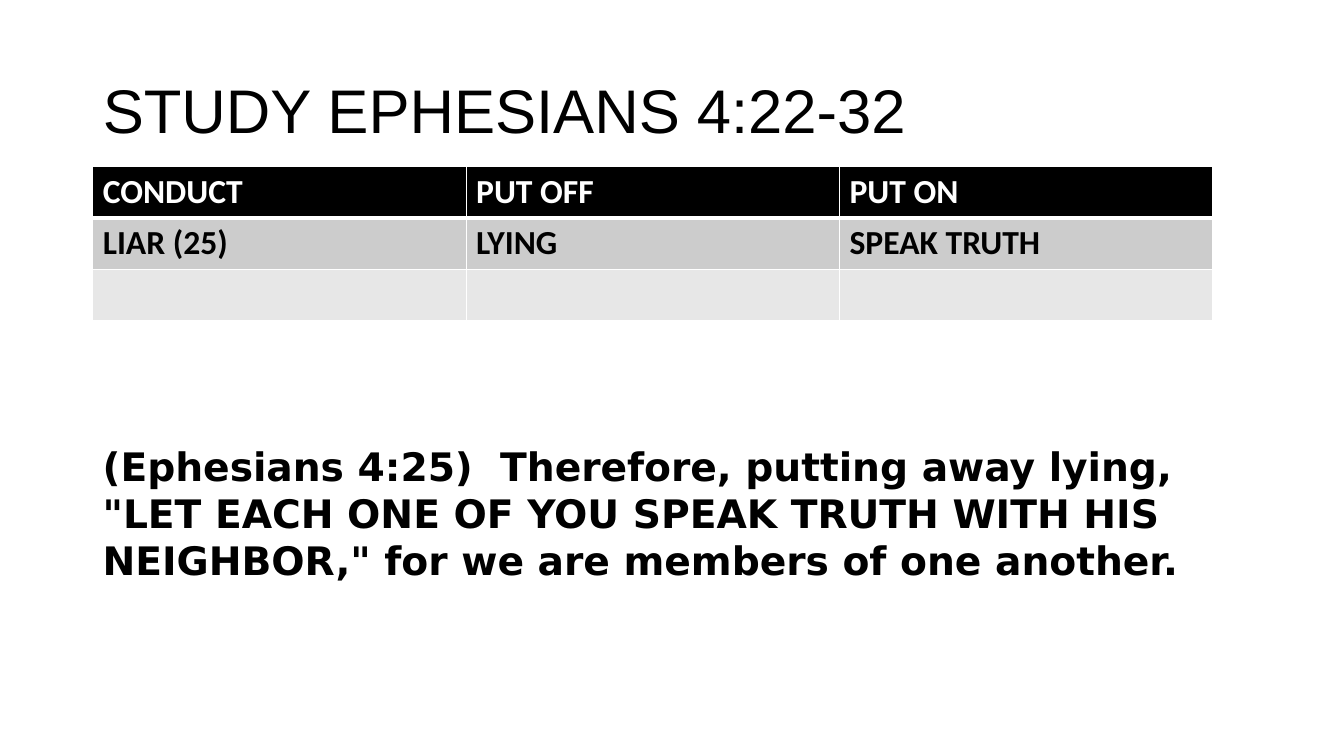
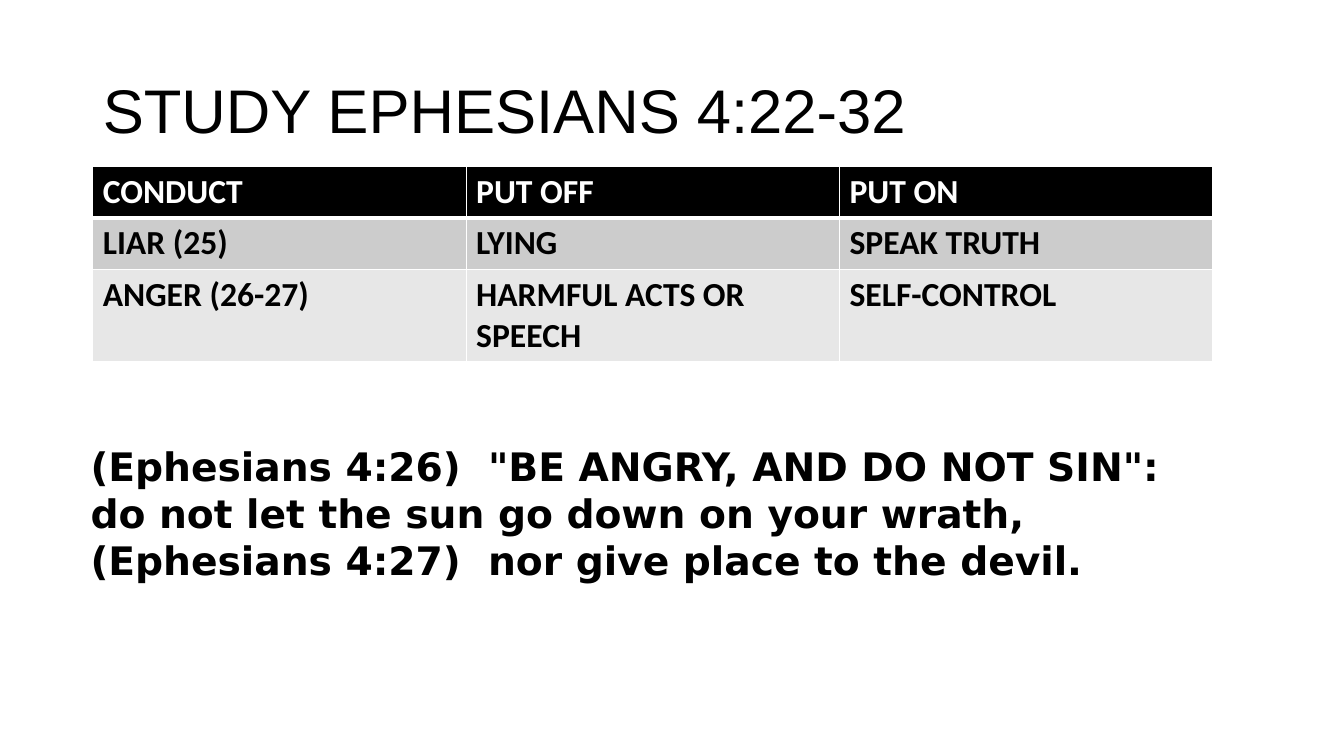
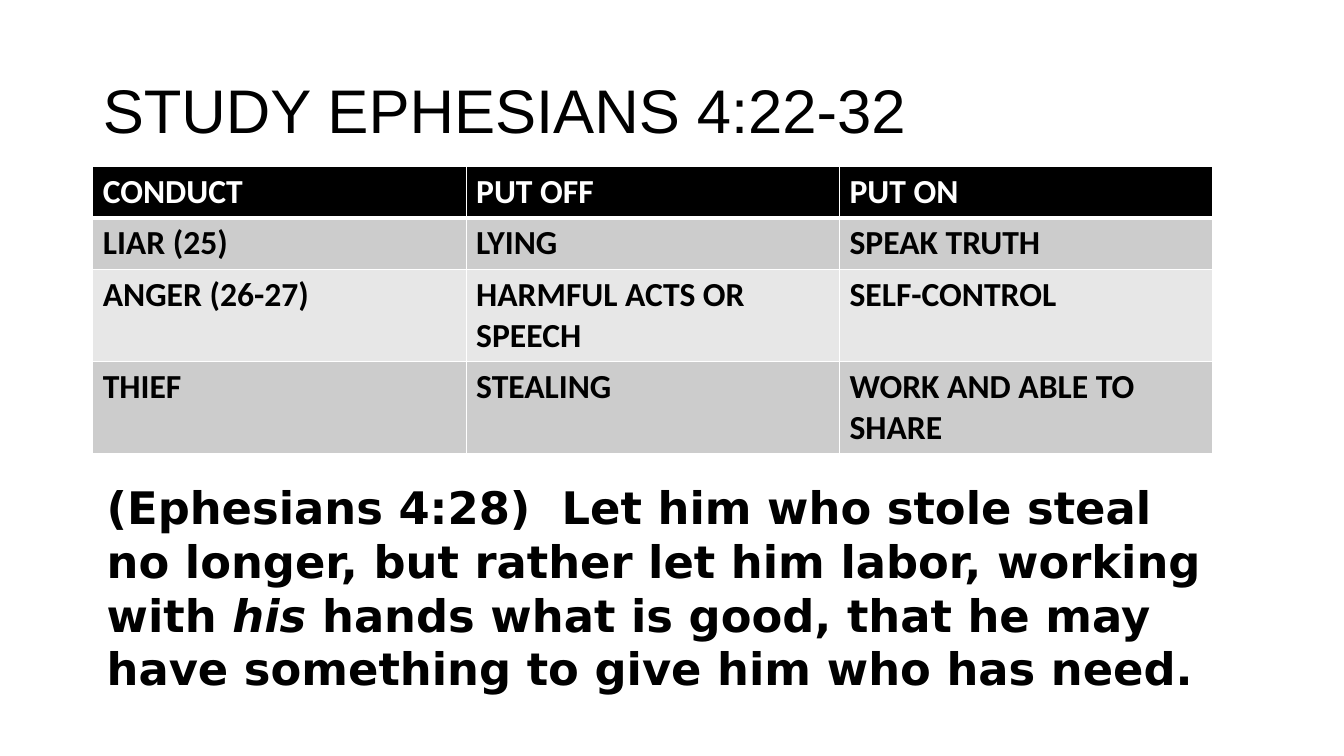
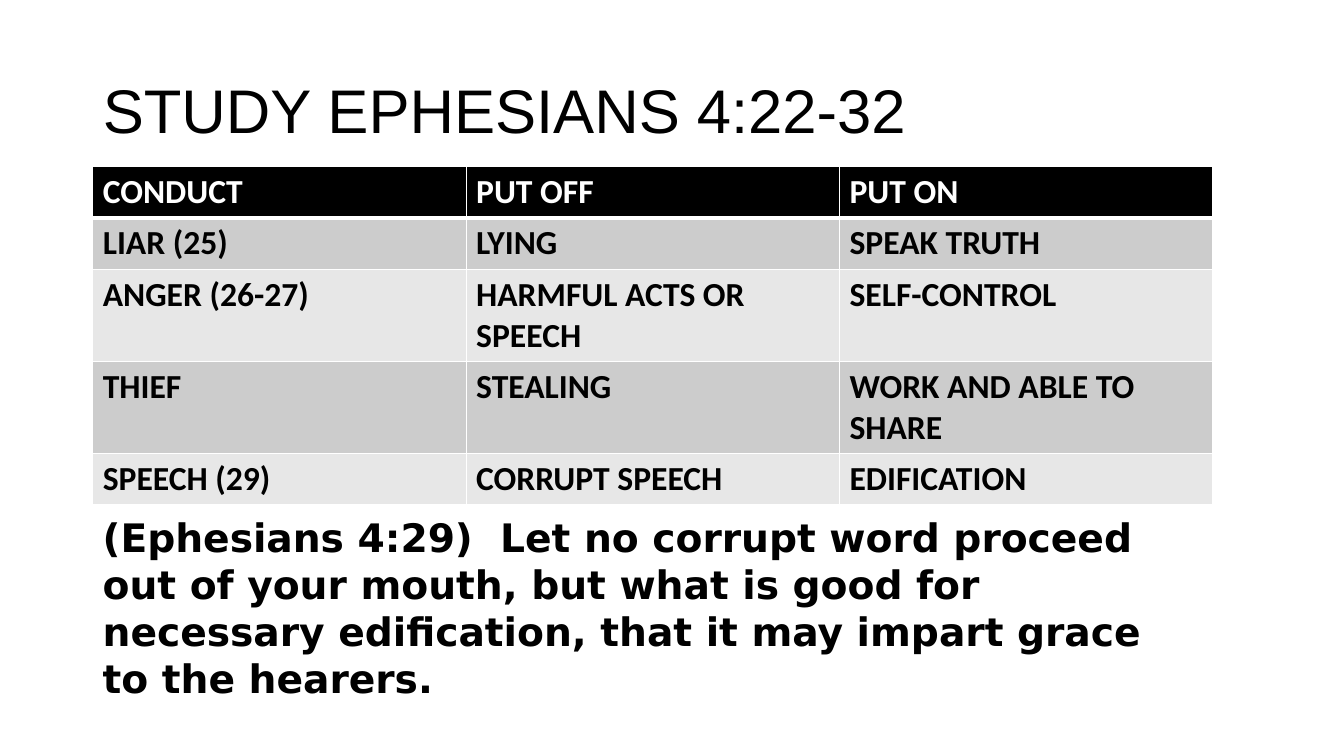
from lxml import etree
from pptx import Presentation
from pptx.dml.color import RGBColor
from pptx.enum.text import MSO_ANCHOR, MSO_AUTO_SIZE, PP_ALIGN
from pptx.oxml.ns import qn
from pptx.util import Inches, Pt

LEFT_ALIGN = PP_ALIGN.LEFT
MIDDLE = MSO_ANCHOR.MIDDLE
NO_AUTOFIT = MSO_AUTO_SIZE.NONE
GROW_SHAPE = MSO_AUTO_SIZE.SHAPE_TO_FIT_TEXT

BLACK = RGBColor(0x00, 0x00, 0x00)
WHITE = RGBColor(0xFF, 0xFF, 0xFF)
DARK_BAND = RGBColor(0xCC, 0xCC, 0xCC)
LIGHT_BAND = RGBColor(0xE7, 0xE7, 0xE7)

TITLE_FONT = "Arial"
TABLE_FONT = "Calibri"
VERSE_FONT = "DejaVu Sans"

TITLE = "STUDY EPHESIANS 4:22-32"
TITLE_BOX = (0.92, 0.4, 11.5, 1.45)
TABLE_LEFT, TABLE_TOP, TABLE_WIDTH = 0.92, 1.65, 11.11
ROW_HEIGHT = 0.51
THIN, THICK = 1, 3

HEADER = ("CONDUCT", "PUT OFF", "PUT ON")
LIAR = ("LIAR (25)", "LYING", "SPEAK TRUTH")
ANGER = ("ANGER (26-27)", "HARMFUL ACTS OR SPEECH", "SELF-CONTROL")
THIEF = ("THIEF", "STEALING", "WORK AND ABLE TO SHARE")
SPEECH = ("SPEECH (29)", "CORRUPT SPEECH", "EDIFICATION")
UNFILLED = ("", "", "")

STUDIES = [
    {
        "rows": [LIAR, UNFILLED],
        "box": (0.92, 4.34, 11.07, 1.51),
        "size": 28,
        "verses": [[(
            "(Ephesians 4:25)  Therefore, putting away lying, \"LET EACH ONE OF YOU "
            "SPEAK TRUTH WITH HIS NEIGHBOR,\" for we are members of one another.", False)]],
    },
    {
        "rows": [LIAR, ANGER],
        "box": (0.8, 4.34, 11.07, 1.51),
        "size": 28,
        "verses": [
            [("(Ephesians 4:26)  \"BE ANGRY, AND DO NOT SIN\": "
              "do not let the sun go down on your wrath,", False)],
            [("(Ephesians 4:27)  nor give place to the devil.", False)],
        ],
    },
    {
        "rows": [LIAR, ANGER, THIEF],
        "box": (0.96, 4.71, 11.07, 2.79),
        "size": 32,
        "verses": [[
            ("(Ephesians 4:28)  Let him who stole steal no longer, "
             "but rather let him labor, working with ", False),
            ("his", True),
            (" hands what is good, that he may have something to give him who has need.", False),
        ]],
    },
    {
        "rows": [LIAR, ANGER, THIEF, SPEECH],
        "box": (0.92, 5.04, 11.07, 1.99),
        "size": 28,
        "verses": [[(
            "(Ephesians 4:29)  Let no corrupt word proceed out of your mouth, but what is "
            "good for necessary edification, that it may impart grace to the hearers.", False)]],
    },
]


def add_run(paragraph, text, font_name, size, color, bold=False, italic=False):
    """Add one formatted run to a paragraph."""
    run = paragraph.add_run()
    run.text = text
    run.font.name = font_name
    run.font.size = Pt(size)
    run.font.color.rgb = color
    run.font.bold = bold
    run.font.italic = italic


def add_title(slide, box):
    """Place and format the title placeholder."""
    shape = slide.shapes.title
    shape.left, shape.top, shape.width, shape.height = map(Inches, box)
    frame = shape.text_frame
    frame.word_wrap = True
    frame.auto_size = NO_AUTOFIT
    frame.vertical_anchor = MIDDLE
    paragraph = frame.paragraphs[0]
    paragraph.alignment = LEFT_ALIGN
    paragraph.line_spacing = 0.9
    add_run(paragraph, TITLE, TITLE_FONT, 44, BLACK)


def set_borders(cell, top, bottom):
    """Draw white borders round a cell, with the given top and bottom widths."""
    properties = cell._tc.get_or_add_tcPr()
    for side, width in (("L", THIN), ("R", THIN), ("T", top), ("B", bottom)):
        line = etree.SubElement(properties, qn(f"a:ln{side}"), w=str(Pt(width)))
        fill = etree.SubElement(line, qn("a:solidFill"))
        etree.SubElement(fill, qn("a:srgbClr"), val=str(WHITE))


def add_conduct_table(slide, left, top, width, rows):
    """Add the banded conduct table with its header row."""
    contents = [HEADER, *rows]
    frame = slide.shapes.add_table(
        len(contents), len(HEADER), Inches(left), Inches(top),
        Inches(width), Inches(ROW_HEIGHT * len(contents)))
    for row_index, texts in enumerate(contents):
        is_header = row_index == 0
        band = DARK_BAND if row_index % 2 else LIGHT_BAND
        for column_index, text in enumerate(texts):
            cell = frame.table.cell(row_index, column_index)
            set_borders(cell, THICK if row_index == 1 else THIN,
                        THICK if is_header else THIN)
            cell.fill.solid()
            cell.fill.fore_color.rgb = BLACK if is_header else band
            if text:
                add_run(cell.text_frame.paragraphs[0], text, TABLE_FONT, 24,
                        WHITE if is_header else BLACK, bold=True)


def add_verses(slide, box, verses, size):
    """Add the bold scripture text, one paragraph for each verse."""
    frame = slide.shapes.add_textbox(*map(Inches, box)).text_frame
    frame.word_wrap = True
    frame.auto_size = GROW_SHAPE
    for index, runs in enumerate(verses):
        paragraph = frame.add_paragraph() if index else frame.paragraphs[0]
        for text, italic in runs:
            add_run(paragraph, text, VERSE_FONT, size, BLACK, bold=True, italic=italic)


def add_study_slide(presentation, study):
    """Add one study slide with title, table and scripture."""
    slide = presentation.slides.add_slide(presentation.slide_layouts[5])
    add_title(slide, TITLE_BOX)
    add_conduct_table(slide, TABLE_LEFT, TABLE_TOP, TABLE_WIDTH, study["rows"])
    add_verses(slide, study["box"], study["verses"], study["size"])


def main():
    """Build and save the presentation."""
    presentation = Presentation()
    presentation.slide_width = Inches(13.33)
    presentation.slide_height = Inches(7.5)
    for study in STUDIES:
        add_study_slide(presentation, study)
    presentation.save("out.pptx")


if __name__ == "__main__":
    main()
